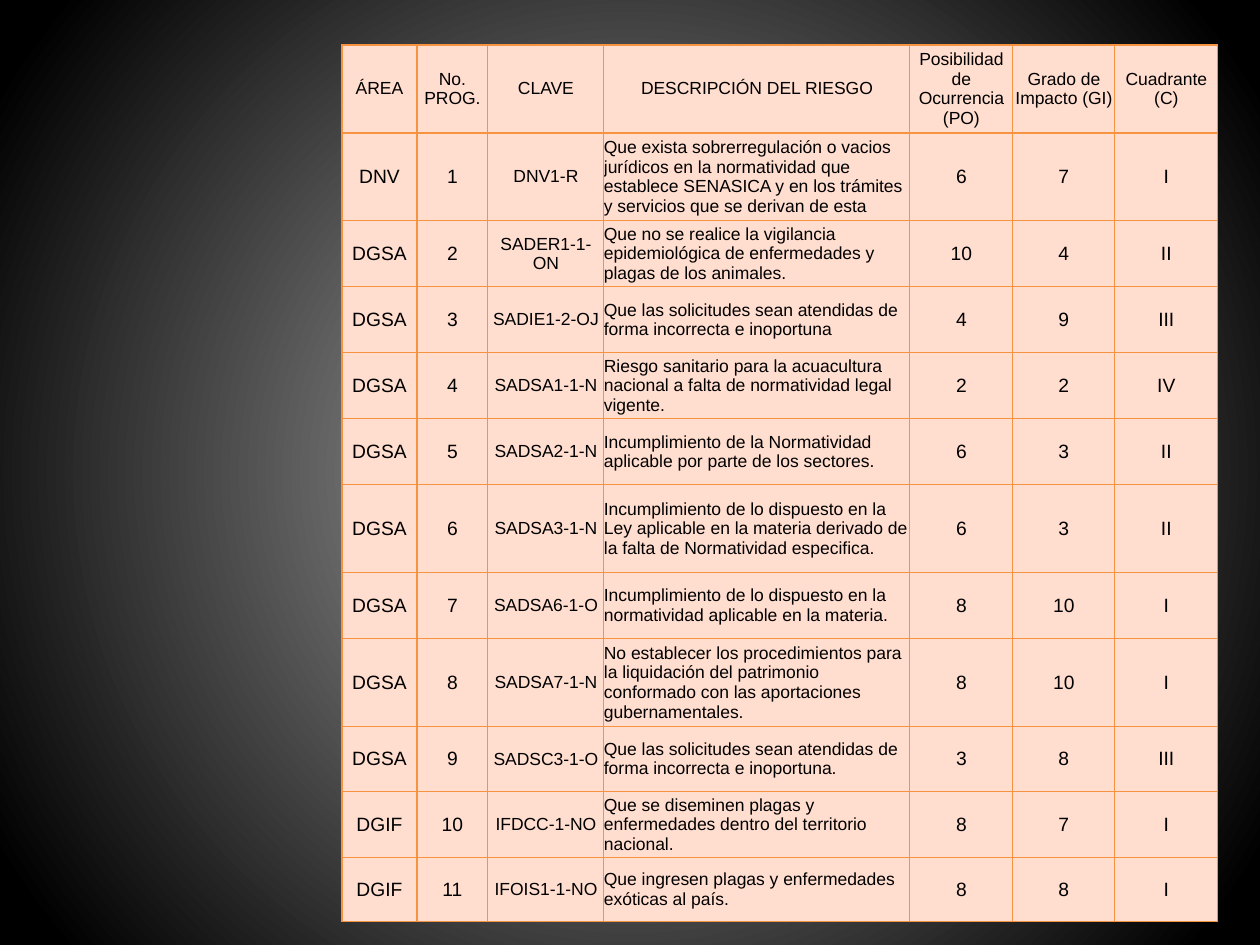
import lxml.etree
import pptx
import pptx.dml.color
import pptx.enum.text
import pptx.oxml.ns
import pptx.util

EMU_PER_PX = 914400 / 126
BLACK = pptx.dml.color.RGBColor(0x00, 0x00, 0x00)
GRAY = pptx.dml.color.RGBColor(0xA6, 0xA6, 0xA6)
PEACH = pptx.dml.color.RGBColor(0xFF, 0xDD, 0xCF)
ORANGE = pptx.dml.color.RGBColor(0xF6, 0x92, 0x40)

COLUMN_WIDTHS = [75, 71, 116, 306, 103, 102, 103]
ROW_HEIGHTS = [88, 88, 66, 66, 66, 66, 88, 66, 88, 65, 66, 64]
CODE_COLUMN, DESCRIPTION_COLUMN = 2, 3

HEADINGS = [
    "ÁREA", "No. PROG.", "CLAVE", "DESCRIPCIÓN DEL RIESGO",
    "Posibilidad de Ocurrencia (PO)", "Grado de Impacto (GI)", "Cuadrante (C)",
]
RISKS = [
    ("DNV", "DNV1-R", "Que exista sobrerregulación o vacios jurídicos en la normatividad que "
     "establece SENASICA y en los trámites y servicios que se derivan de esta", 6, 7, "I"),
    ("DGSA", "SADER1-1-ON", "Que no se realice la vigilancia epidemiológica de enfermedades "
     "y plagas de los animales.", 10, 4, "II"),
    ("DGSA", "SADIE1-2-OJ", "Que las solicitudes sean atendidas de forma incorrecta "
     "e inoportuna", 4, 9, "III"),
    ("DGSA", "SADSA1-1-N", "Riesgo sanitario para la acuacultura nacional a falta de "
     "normatividad legal vigente.", 2, 2, "IV"),
    ("DGSA", "SADSA2-1-N", "Incumplimiento de la Normatividad aplicable por parte de "
     "los sectores.", 6, 3, "II"),
    ("DGSA", "SADSA3-1-N", "Incumplimiento de lo dispuesto en la Ley aplicable en la materia "
     "derivado de la falta de Normatividad especifica.", 6, 3, "II"),
    ("DGSA", "SADSA6-1-O", "Incumplimiento de lo dispuesto en la normatividad aplicable "
     "en la materia.", 8, 10, "I"),
    ("DGSA", "SADSA7-1-N", "No establecer los procedimientos para la liquidación del "
     "patrimonio conformado con las aportaciones gubernamentales.", 8, 10, "I"),
    ("DGSA", "SADSC3-1-O", "Que las solicitudes sean atendidas de forma incorrecta "
     "e inoportuna.", 3, 8, "III"),
    ("DGIF", "IFDCC-1-NO", "Que se diseminen plagas y enfermedades dentro del territorio "
     "nacional.", 8, 7, "I"),
    ("DGIF", "IFOIS1-1-NO", "Que ingresen plagas y enfermedades exóticas al país.", 8, 8, "I"),
]


def px(length):
    return pptx.util.Emu(round(length * EMU_PER_PX))


def apply_format(target, values):
    for name, value in values.items():
        setattr(target, name, value)


def add_child(parent, tag, **attributes):
    return lxml.etree.SubElement(parent, pptx.oxml.ns.qn(tag), attributes)


def paint_background(page):
    fill = page.background.fill
    fill.gradient()
    for stop, color, position in zip(fill.gradient_stops, (GRAY, BLACK), (0.02, 0.94)):
        stop.color.rgb = color
        stop.position = position
    gradient = page.element.find(".//" + pptx.oxml.ns.qn("a:gradFill"))
    gradient.remove(gradient.find(pptx.oxml.ns.qn("a:lin")))
    circle = add_child(gradient, "a:path", path="circle")
    add_child(circle, "a:fillToRect", l="50000", t="50000", r="50000", b="50000")


def add_borders(cell):
    properties = cell._tc.get_or_add_tcPr()
    for side in ("L", "R", "T", "B"):
        line = add_child(properties, "a:ln" + side, w=str(pptx.util.Pt(0.75)))
        add_child(add_child(line, "a:solidFill"), "a:srgbClr", val=str(ORANGE))


def fill_cell(cell, text, size, alignment):
    apply_format(cell, {
        "margin_left": 0, "margin_right": 0, "margin_top": 0, "margin_bottom": 0,
        "vertical_anchor": pptx.enum.text.MSO_ANCHOR.MIDDLE,
    })
    add_borders(cell)
    cell.fill.solid()
    cell.fill.fore_color.rgb = PEACH
    para = cell.text_frame.paragraphs[0]
    para.alignment = alignment
    span = para.add_run()
    span.text = str(text)
    apply_format(span.font, {"name": "Arial", "size": pptx.util.Pt(size), "bold": False})
    span.font.color.rgb = BLACK


def add_risk_table(page):
    rows = [HEADINGS] + [
        (area, number, *details) for number, (area, *details) in enumerate(RISKS, 1)
    ]
    table = page.shapes.add_table(
        len(rows), len(HEADINGS), px(342), px(45),
        px(sum(COLUMN_WIDTHS)), px(sum(ROW_HEIGHTS)),
    ).table
    apply_format(table, {"first_row": False, "horz_banding": False})
    for column, width in zip(table.columns, COLUMN_WIDTHS):
        column.width = px(width)
    for row, height in zip(table.rows, ROW_HEIGHTS):
        row.height = px(height)
    align = pptx.enum.text.PP_ALIGN
    for i, values in enumerate(rows):
        for j, text in enumerate(values):
            small = i == 0 or j in (CODE_COLUMN, DESCRIPTION_COLUMN)
            left = i > 0 and j == DESCRIPTION_COLUMN
            fill_cell(table.cell(i, j), text, 10 if small else 11,
                      align.LEFT if left else align.CENTER)


def main():
    deck = pptx.Presentation()
    apply_format(deck, {"slide_width": px(1260), "slide_height": px(945)})
    page = deck.slides.add_slide(deck.slide_layouts[6])
    paint_background(page)
    add_risk_table(page)
    deck.save("out.pptx")


if __name__ == "__main__":
    main()
